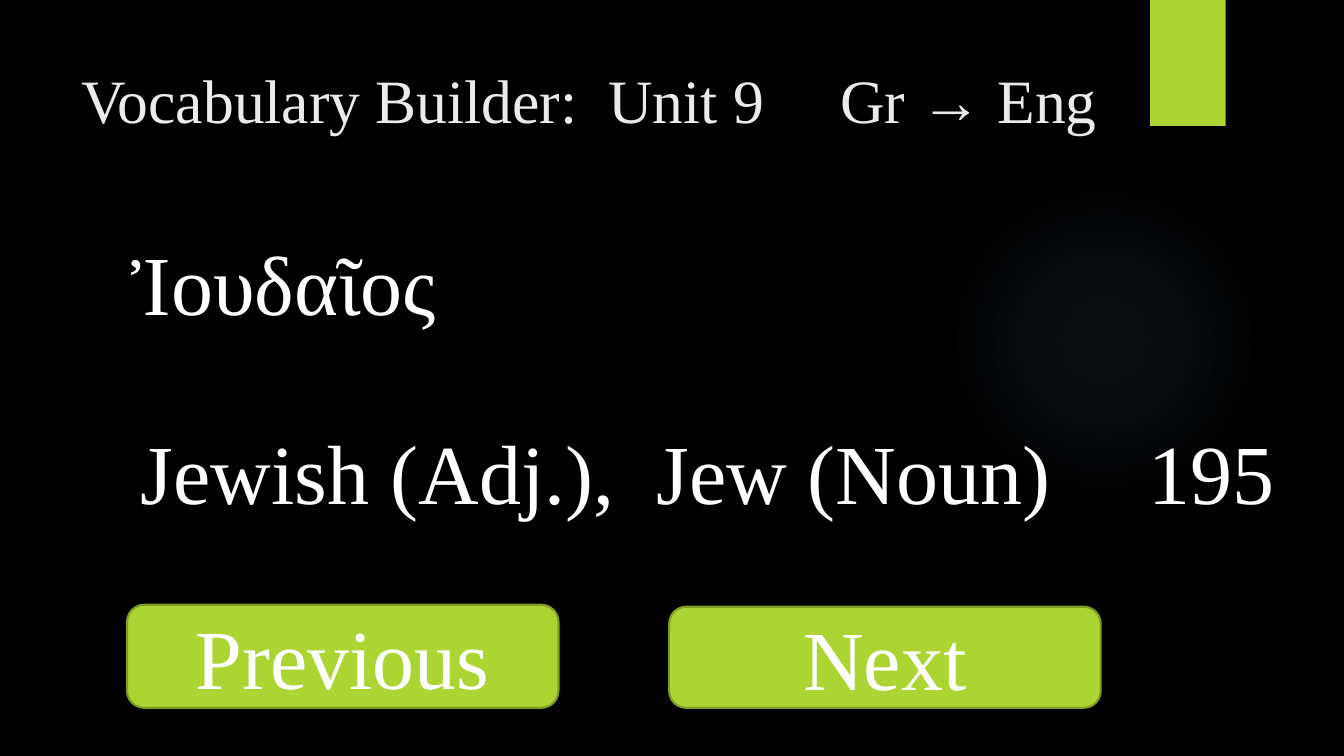
from lxml.etree import SubElement
from pptx import Presentation
from pptx.dml.color import RGBColor
from pptx.enum.shapes import MSO_SHAPE
from pptx.enum.text import MSO_ANCHOR, PP_ALIGN
from pptx.oxml import parse_xml
from pptx.oxml.ns import nsdecls, qn
from pptx.util import Pt

COLORS = {"black": "000000", "white": "FFFFFF", "title": "EBEBEB",
          "green": "ACD433", "outline": "7F9D26", "glow": "7AC4F0"}


def add_shape(kind, x, y, w, h):
    sp = s.shapes.add_shape(kind, Pt(x), Pt(y), Pt(w), Pt(h))
    sp.shadow.inherit = False
    sp.fill.solid()
    sp.fill.fore_color.rgb = RGBColor.from_string(COLORS["green"])
    sp.line.fill.background()
    return sp


def write(sp, text, size=60, color="white", align=PP_ALIGN.LEFT,
          anchor=MSO_ANCHOR.TOP, wrap=True, tab=None):
    """Fill a shape with one formatted line; tab is a tab stop in points."""
    tf = sp.text_frame
    tf.word_wrap = wrap
    tf.vertical_anchor = anchor
    p = tf.paragraphs[0]
    p.alignment = align
    if tab:
        stops = SubElement(p._p.get_or_add_pPr(), qn("a:tabLst"))
        SubElement(stops, qn("a:tab"), pos=str(Pt(tab)), algn="l")
    r = p.add_run()
    r.text = text
    r.font.size = Pt(size)
    r.font.name = "Times New Roman"
    r.font.color.rgb = RGBColor.from_string(COLORS[color])


prs = Presentation()
prs.slide_width, prs.slide_height = Pt(960), Pt(540)
s = prs.slides.add_slide(prs.slide_layouts[6])
s.background.fill.solid()
s.background.fill.fore_color.rgb = RGBColor.from_string(COLORS["black"])

# Soft glow that fades out from its centre
glow = add_shape(MSO_SHAPE.OVAL, 677.5, 131.8, 221.8, 221.8)
stops = "".join(
    f'<a:gs pos="{pos * 1000}"><a:srgbClr val="{COLORS["glow"]}">'
    f'<a:alpha val="{alpha * 1000}"/></a:srgbClr></a:gs>'
    for pos, alpha in [(0, 7), (36, 6), (69, 0)])
gradient = parse_xml(
    f'<a:gradFill {nsdecls("a")}><a:gsLst>{stops}</a:gsLst><a:path path="circle">'
    '<a:fillToRect l="50000" t="50000" r="50000" b="50000"/></a:path></a:gradFill>')
solid = glow._element.spPr.find(qn("a:solidFill"))
solid.getparent().replace(solid, gradient)

add_shape(MSO_SHAPE.RECTANGLE, 821.5, 0, 54, 90)

title = s.shapes.add_textbox(Pt(51), Pt(36), Pt(780), Pt(69))
write(title, "Vocabulary Builder:  Unit 9\tGr → Eng", size=44, color="title",
      anchor=MSO_ANCHOR.MIDDLE, tab=542)

word = s.shapes.add_textbox(Pt(87), Pt(162), Pt(704), Pt(111.6))
write(word, "Ἰουδαῖος")

meaning = s.shapes.add_textbox(Pt(93.6), Pt(296.6), Pt(832.3), Pt(80))
write(meaning, "Jewish (Adj.),  Jew (Noun)\t195", wrap=False, tab=720)

for label, x, y, h in [("Previous", 90.7, 432, 73.6), ("Next", 478, 433.4, 72.2)]:
    button = add_shape(MSO_SHAPE.ROUNDED_RECTANGLE, x, y, 308.2, h)
    button.line.color.rgb = RGBColor.from_string(COLORS["outline"])
    button.line.width = Pt(1.5)
    write(button, label, align=PP_ALIGN.CENTER, anchor=MSO_ANCHOR.MIDDLE)

prs.save("out.pptx")
